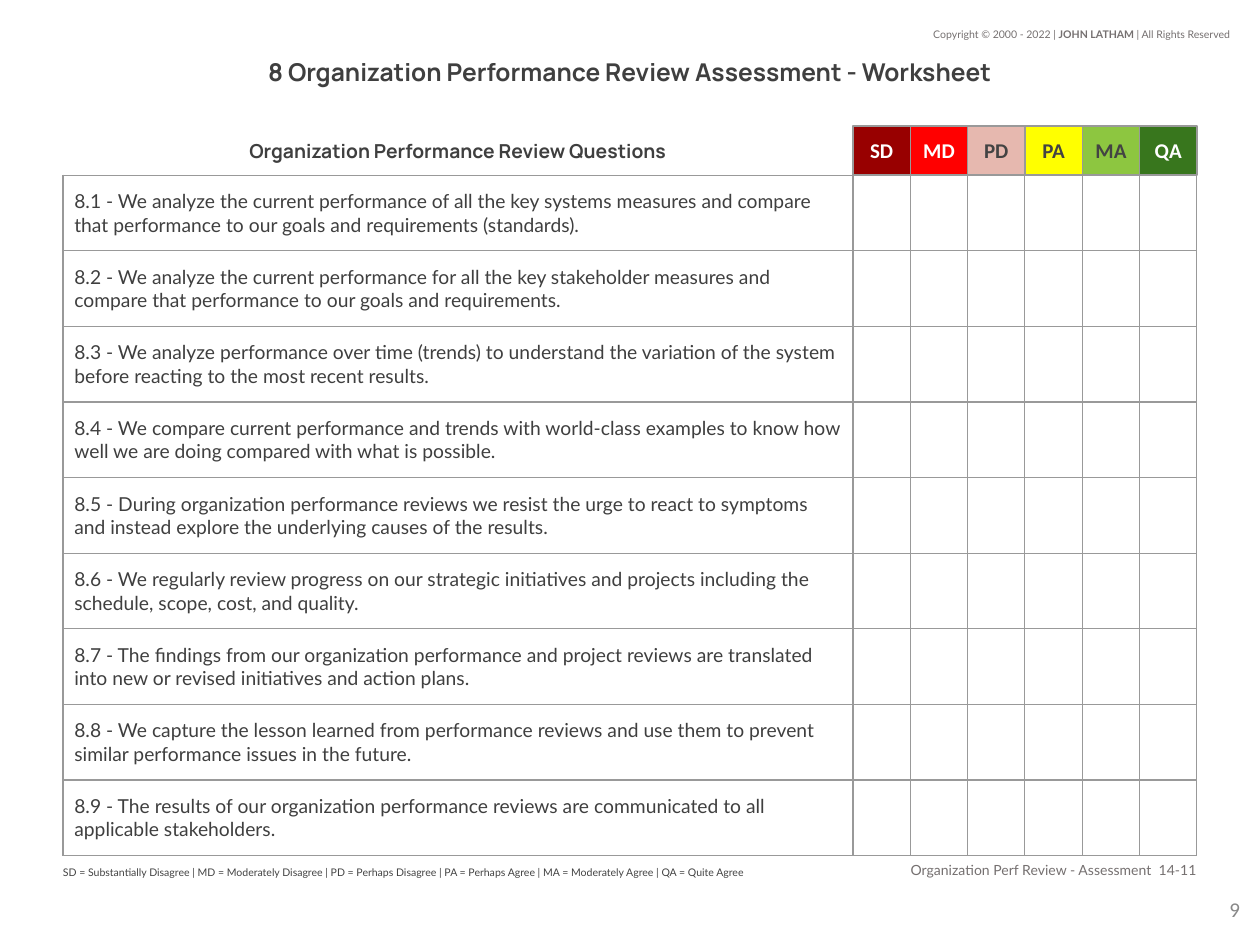
from dataclasses import dataclass

from lxml import etree
from pptx import Presentation
from pptx.dml.color import RGBColor
from pptx.enum import shapes, text
from pptx.oxml import ns
from pptx.util import Inches, Pt

INK = RGBColor(0x3F, 0x3F, 0x3F)
DARK = RGBColor(0x43, 0x43, 0x43)
MUTED = RGBColor(0x75, 0x70, 0x70)
PALE = RGBColor(0x88, 0x88, 0x88)
WHITE = RGBColor(0xFF, 0xFF, 0xFF)
GRID = RGBColor(0x99, 0x99, 0x99)
DEEP_RED = RGBColor(0x98, 0x00, 0x00)
RED = RGBColor(0xFF, 0x00, 0x00)
PINK = RGBColor(0xE6, 0xB8, 0xAF)
YELLOW = RGBColor(0xFF, 0xFF, 0x00)
LIME = RGBColor(0x8D, 0xC6, 0x40)
GREEN = RGBColor(0x38, 0x76, 0x1D)

LEFT, TABLE_TOP, HEADER_TOP = 0.5, 1.39, 1.0
QUESTION_WIDTH, RATING_WIDTH, ROW_HEIGHT = 6.27, 0.455, 0.6
LINE_WIDTH = Pt(0.75)

START, CENTER, END = text.PP_ALIGN.LEFT, text.PP_ALIGN.CENTER, text.PP_ALIGN.RIGHT
MIDDLE, TOP = text.MSO_ANCHOR.MIDDLE, text.MSO_ANCHOR.TOP


@dataclass(frozen=True)
class Style:
    font: str
    size: float
    color: RGBColor
    bold: bool = False


@dataclass(frozen=True)
class Label:
    spans: tuple[str, ...]
    left: float
    top: float
    width: float
    height: float
    style: Style
    align: text.PP_ALIGN
    insets: tuple[float, float, float, float] = (0.1, 0.1, 0.1, 0.1)
    anchor: text.MSO_ANCHOR = MIDDLE
    bold_span: int = -1


@dataclass(frozen=True)
class Rating:
    code: str
    fill: RGBColor
    ink: RGBColor


LABELS = [
    Label(("Copyright © 2000 - 2022 | ", "JOHN LATHAM ", "| All Rights Reserved"),
          7.28, 0.17, 2.58, 0.2, Style("Lato", 6, MUTED), END,
          (0.1, 0.05, 0.1, 0.05), TOP, bold_span=1),
    Label(("8 Organization Performance Review Assessment - Worksheet",),
          LEFT, 0.42, 9, 0.3, Style("Manrope", 14, INK, True), CENTER),
    Label(("Organization Performance Review Questions",),
          LEFT, HEADER_TOP, QUESTION_WIDTH, 0.39, Style("Manrope", 11, INK, True), CENTER),
    Label(("SD = Substantially Disagree | MD = Moderately Disagree | PD = Perhaps Disagree"
           " | PA = Perhaps Agree | MA = Moderately Agree | QA = Quite Agree",),
          LEFT, 6.78, QUESTION_WIDTH, 0.28, Style("Lato", 6, DARK), START, (0, 0.1, 0.1, 0.1)),
    Label(("Organization Perf Review - Assessment  14-11",),
          6.77, 6.8, 2.73, 0.21, Style("Lato", 8, MUTED), END, (0.1, 0.1, 0, 0.1)),
    Label(("9",), 9.34, 6.93, 0.6, 0.57, Style("Calibri", 12, PALE), END),
]

RATINGS = [
    Rating("SD", DEEP_RED, WHITE),
    Rating("MD", RED, WHITE),
    Rating("PD", PINK, DARK),
    Rating("PA", YELLOW, DARK),
    Rating("MA", LIME, DARK),
    Rating("QA", GREEN, WHITE),
]

QUESTIONS = [
    "We analyze the current performance of all the key systems measures and compare "
    "that performance to our goals and requirements (standards).",
    "We analyze the current performance for all the key stakeholder measures and "
    "compare that performance to our goals and requirements.",
    "We analyze performance over time (trends) to understand the variation of the system "
    "before reacting to the most recent results.",
    "We compare current performance and trends with world-class examples to know how "
    "well we are doing compared with what is possible.",
    "During organization performance reviews we resist the urge to react to symptoms "
    "and instead explore the underlying causes of the results.",
    "We regularly review progress on our strategic initiatives and projects including the "
    "schedule, scope, cost, and quality.",
    "The findings from our organization performance and project reviews are translated "
    "into new or revised initiatives and action plans.",
    "We capture the lesson learned from performance reviews and use them to prevent "
    "similar performance issues in the future.",
    "The results of our organization performance reviews are communicated to all "
    "applicable stakeholders.",
]


def apply_style(font, style: Style) -> None:
    font.name = style.font
    font.size = Pt(style.size)
    font.bold = style.bold
    font.color.rgb = style.color


def set_insets(holder, insets: tuple[float, float, float, float]) -> None:
    sides = ("margin_left", "margin_top", "margin_right", "margin_bottom")
    for side, inset in zip(sides, insets):
        setattr(holder, side, Inches(inset))


def add_label(page, label: Label) -> None:
    box = page.shapes.add_textbox(Inches(label.left), Inches(label.top),
                                  Inches(label.width), Inches(label.height))
    frame = box.text_frame
    frame.word_wrap = True
    frame.vertical_anchor = label.anchor
    set_insets(frame, label.insets)
    para = frame.paragraphs[0]
    para.alignment = label.align
    for index, words in enumerate(label.spans):
        span = para.add_run()
        span.text = words
        apply_style(span.font, label.style)
        if index == label.bold_span:
            span.font.bold = True


def add_rating(page, rating: Rating, column: int) -> None:
    left = LEFT + QUESTION_WIDTH + column * RATING_WIDTH
    box = page.shapes.add_shape(shapes.MSO_SHAPE.RECTANGLE, Inches(left), Inches(HEADER_TOP),
                                Inches(RATING_WIDTH), Inches(TABLE_TOP - HEADER_TOP))
    box.shadow.inherit = False
    box.fill.solid()
    box.fill.fore_color.rgb = rating.fill
    box.line.color.rgb = GRID
    box.line.width = LINE_WIDTH
    frame = box.text_frame
    frame.text = rating.code
    frame.vertical_anchor = MIDDLE
    set_insets(frame, (0, 0.1, 0, 0.1))
    para = frame.paragraphs[0]
    para.alignment = CENTER
    apply_style(para.runs[0].font, Style("Calibri", 12, rating.ink, True))


def add_borders(cell) -> None:
    # Borders must come before the fill in the cell properties
    properties = cell._tc.get_or_add_tcPr()
    for position, side in enumerate(("lnL", "lnR", "lnT", "lnB")):
        line = etree.Element(ns.qn(f"a:{side}"), w=str(LINE_WIDTH))
        fill = etree.SubElement(line, ns.qn("a:solidFill"))
        etree.SubElement(fill, ns.qn("a:srgbClr"), val=str(GRID))
        properties.insert(position, line)


def add_question_table(page) -> None:
    widths = [QUESTION_WIDTH] + [RATING_WIDTH] * len(RATINGS)
    frame = page.shapes.add_table(len(QUESTIONS), len(widths), Inches(LEFT), Inches(TABLE_TOP),
                                  Inches(sum(widths)), Inches(ROW_HEIGHT * len(QUESTIONS)))
    table = frame.table
    table.first_row = table.horz_banding = False
    for column, width in zip(table.columns, widths):
        column.width = Inches(width)
    for number, (row, question) in enumerate(zip(table.rows, QUESTIONS), start=1):
        row.height = Inches(ROW_HEIGHT)
        for cell in row.cells:
            cell.fill.background()
            cell.vertical_anchor = MIDDLE
            set_insets(cell, (0.09, 0.09, 0.09, 0.09))
            add_borders(cell)
        para = row.cells[0].text_frame.paragraphs[0]
        para.text = f"8.{number} - {question}"
        apply_style(para.runs[0].font, Style("Lato", 11, INK))


def main() -> None:
    deck = Presentation()
    deck.slide_width, deck.slide_height = Inches(10), Inches(7.5)
    page = deck.slides.add_slide(deck.slide_layouts[6])

    # Title, captions and page number
    for label in LABELS:
        add_label(page, label)

    # Worksheet grid with its rating header
    add_question_table(page)
    for column, rating in enumerate(RATINGS):
        add_rating(page, rating, column)

    deck.save("out.pptx")


if __name__ == "__main__":
    main()
